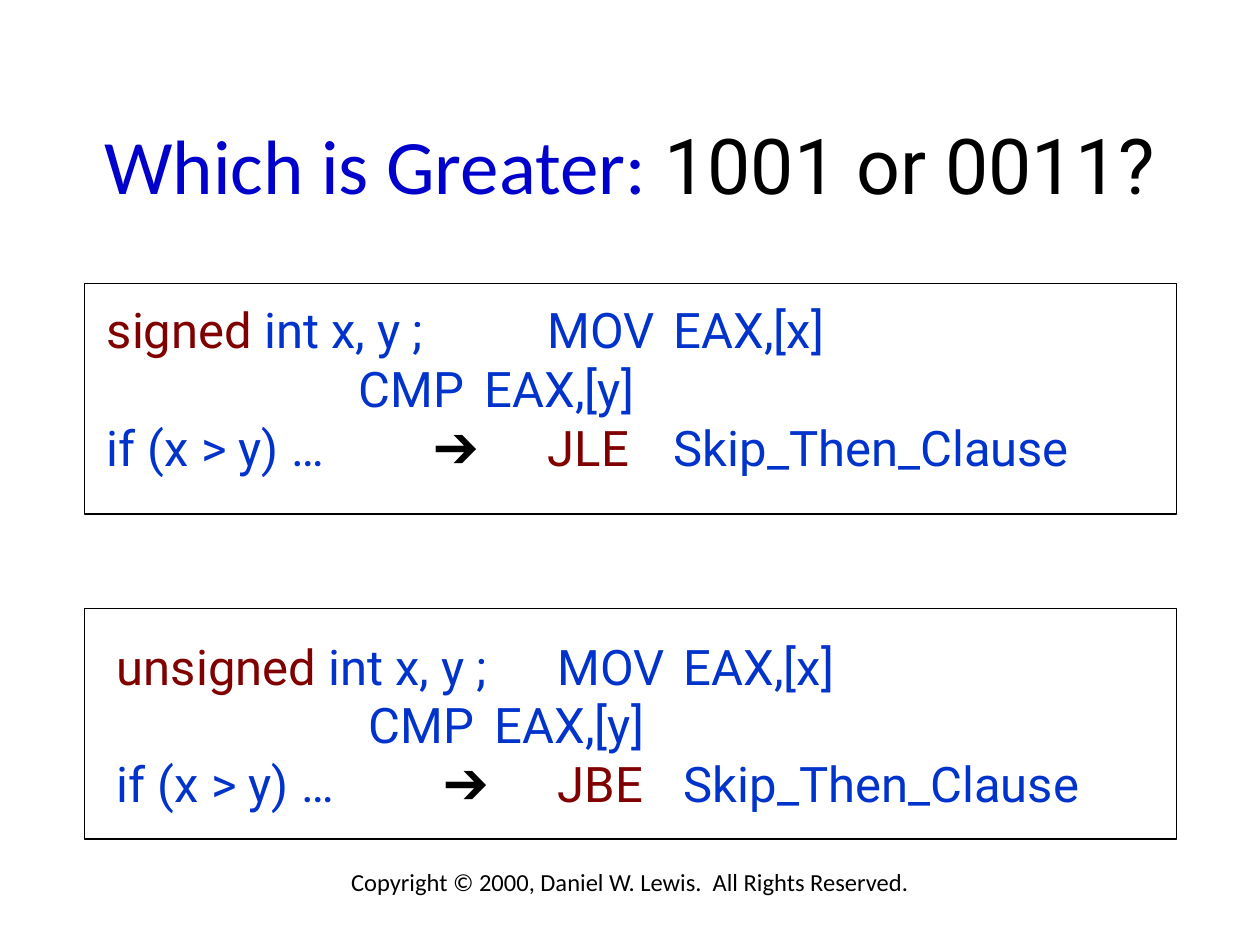
from pptx import Presentation
from pptx.dml.color import RGBColor
from pptx.enum import shapes, text
from pptx.util import Inches, Pt

COLORS = {"title": "0000CC", "code": "0033CC", "key": "800000", "black": "000000"}

prs = Presentation()
prs.slide_width, prs.slide_height = Inches(10), Inches(7.5)
s = prs.slides.add_slide(prs.slide_layouts[6])


def add_text(x, y, w, h):
    tf = s.shapes.add_textbox(Inches(x), Inches(y), Inches(w), Inches(h)).text_frame
    tf.word_wrap = True
    return tf


def add_run(p, words, size, font, color):
    r = p.add_run()
    r.text = words
    r.font.size = Pt(size)
    r.font.name = font
    r.font.color.rgb = RGBColor.from_string(COLORS[color])


tf = add_text(0.75, 6.83, 8.5, 0.5)
p = tf.paragraphs[0]
p.alignment = text.PP_ALIGN.CENTER
add_run(p, "Copyright © 2000, Daniel W. Lewis.  All Rights Reserved.", 14, "Calibri", "black")

tf = add_text(0, 0.67, 10, 1.25)
tf.vertical_anchor = text.MSO_ANCHOR.MIDDLE
p = tf.paragraphs[0]
p.alignment = text.PP_ALIGN.CENTER
add_run(p, "Which is Greater: ", 44, "Calibri", "title")
add_run(p, "1001 or 0011?", 44, "Roboto", "black")

examples = [
    ("signed", "\t\t", "JLE", 0.75, 2.33, 2.25),
    ("unsigned", "\t", "JBE", 0.83, 5, 4.83),
]
for sign, tabs, jump, x, y, frame_y in examples:
    p = add_text(x, y, 8.33, 1.5).paragraphs[0]
    add_run(p, sign, 28, "Roboto", "key")
    add_run(p, f" int x, y ; {tabs}MOV\tEAX,[x]", 28, "Roboto", "code")
    p.add_line_break()
    add_run(p, "\t\t\t\tCMP\tEAX,[y]", 28, "Roboto", "code")
    p.add_line_break()
    add_run(p, "if (x > y) …\t\t ", 28, "Roboto", "code")
    add_run(p, "➔ \t", 28, "Times New Roman", "black")
    add_run(p, jump, 28, "Roboto", "key")
    add_run(p, "\tSkip_Then_Clause", 28, "Roboto", "code")

    sp = s.shapes.add_shape(shapes.MSO_SHAPE.RECTANGLE, Inches(0.67), Inches(frame_y),
                            Inches(8.67), Inches(1.83))
    sp.shadow.inherit = False
    sp.fill.background()
    sp.line.color.rgb = RGBColor.from_string(COLORS["black"])
    sp.line.width = Pt(0.75)

prs.save("out.pptx")
